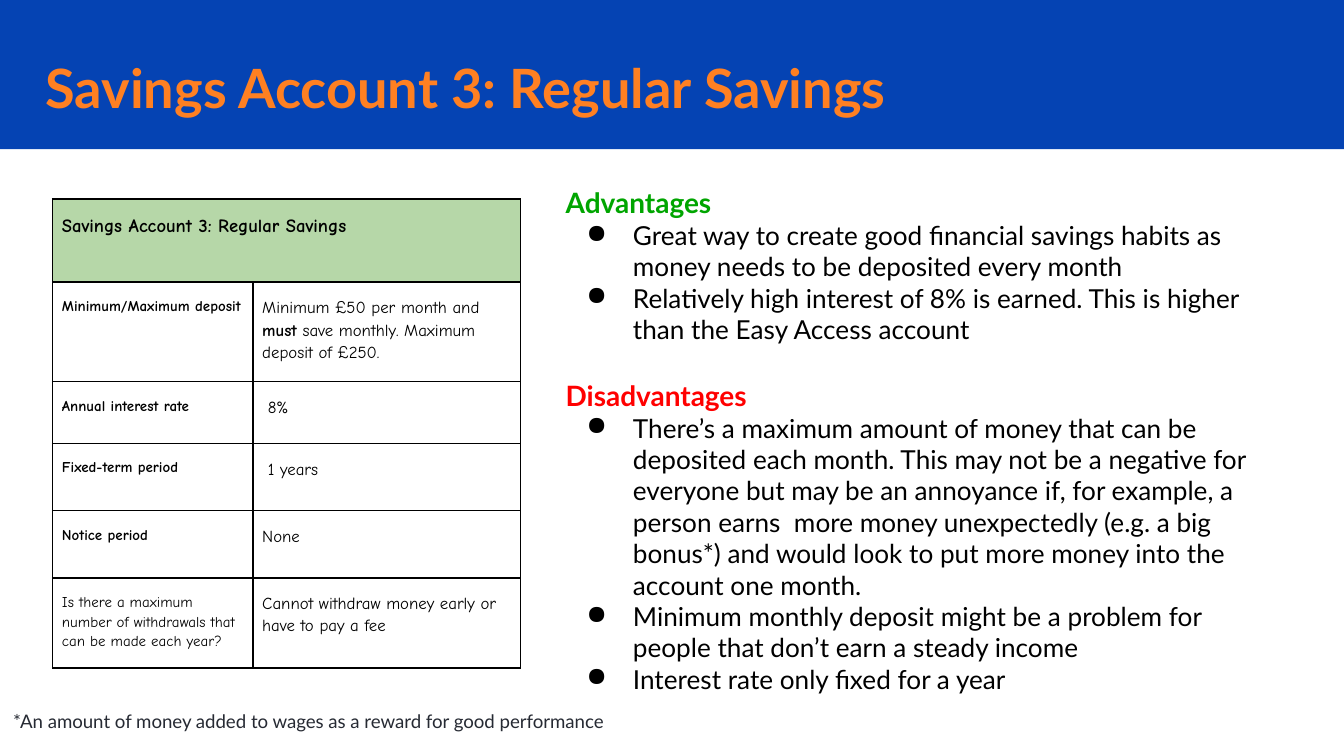
"""Build the Regular Savings slide: account table, advantages and disadvantages."""
from lxml.etree import SubElement
from pptx import Presentation
from pptx.dml.color import RGBColor
from pptx.enum.shapes import MSO_SHAPE
from pptx.oxml.ns import qn
from pptx.util import Pt

COLORS = {"band": "0543B3", "title": "FF8022", "good": "00A500", "bad": "FF0000",
          "text": "000000", "note": "262A33", "header": "B6D7A8", "white": "FFFFFF"}


def add_span(para, text, size, color="text", bold=False, name="Lato"):
    span = para.add_run()
    span.text = text
    span.font.size = Pt(size)
    span.font.name = name
    span.font.bold = bold
    span.font.color.rgb = RGBColor.from_string(COLORS[color])


def add_box(left, top, width, height):
    frame = slide.shapes.add_textbox(Pt(left), Pt(top), Pt(width), Pt(height)).text_frame
    frame.word_wrap = True
    frame.margin_left = frame.margin_right = Pt(7.2)
    frame.margin_top = frame.margin_bottom = Pt(7.2)
    return frame


deck = Presentation()
deck.slide_width, deck.slide_height = Pt(720), Pt(405)
slide = deck.slides.add_slide(deck.slide_layouts[6])

band = slide.shapes.add_shape(MSO_SHAPE.RECTANGLE, 0, 0, Pt(720), Pt(80))
band.shadow.inherit = False
band.fill.solid()
band.fill.fore_color.rgb = RGBColor.from_string(COLORS["band"])
band.line.fill.background()

sections = [
    ("Advantages", "good", [
        "Great way to create good financial savings habits as money needs to be deposited every month",
        "Relatively high interest of 8% is earned. This is higher than the Easy Access account"]),
    ("Disadvantages", "bad", [
        "There’s a maximum amount of money that can be deposited each month. This may not be a "
        "negative for everyone but may be an annoyance if, for example, a person earns  more money "
        "unexpectedly (e.g. a big bonus*) and would look to put more money into the account one month.",
        "Minimum monthly deposit might be a problem for people that don’t earn a steady income",
        "Interest rate only fixed for a year"]),
]
frame = add_box(296, 92.3, 386, 289.4)
for index, (heading, color, points) in enumerate(sections):
    para = frame.add_paragraph() if index else frame.paragraphs[0]
    if index:
        para.space_before = Pt(18)
    add_span(para, heading, 15, color, True)
    for point in points:
        para = frame.add_paragraph()
        properties = para._p.get_or_add_pPr()
        properties.set("marL", str(Pt(36)))
        properties.set("indent", str(Pt(-25)))
        bullet_color = SubElement(properties, qn("a:buClr"))
        SubElement(bullet_color, qn("a:srgbClr"), val=COLORS["text"])
        SubElement(properties, qn("a:buChar"), char="●")
        add_span(para, point, 14)

rows = [
    (44.6, [("Savings Account 3: Regular Savings", True)], []),
    (53.3, [("Minimum/Maximum deposit", True)],
     [("Minimum £50 per month and ", False), ("must", True),
      (" save monthly. Maximum deposit of £250.", False)]),
    (33.1, [("Annual interest rate", True)], [(" 8%", False)]),
    (36, [("Fixed-term period", True)], [(" 1 years", False)]),
    (36, [("Notice period", True)], [("None", False)]),
    (48.2, [("Is there a maximum number of withdrawals that can be made each year?", False)],
     [("Cannot withdraw money early or have to pay a fee", False)]),
]
widths = [107.3, 143.3]
table = slide.shapes.add_table(len(rows), 2, Pt(28.2), Pt(106.6), Pt(sum(widths)),
                               Pt(sum(row[0] for row in rows))).table
table.first_row = table.horz_banding = False
for column, width in zip(table.columns, widths):
    column.width = Pt(width)
table.cell(0, 0).merge(table.cell(0, 1))
for row_index, (height, *contents) in enumerate(rows):
    table.rows[row_index].height = Pt(height)
    for column_index, spans in enumerate(contents):
        cell = table.cell(row_index, column_index)
        cell.margin_left = cell.margin_right = Pt(5)
        cell.margin_top = cell.margin_bottom = Pt(7.2)
        para = cell.text_frame.paragraphs[0]
        para.line_spacing = 1.15
        size = 10 if row_index == 0 else (8, 9)[column_index]
        for text, bold in spans:
            add_span(para, text, size, bold=bold, name="Comic Neue")
        properties = cell._tc.get_or_add_tcPr()
        for side in ("lnL", "lnR", "lnT", "lnB"):
            border = SubElement(properties, qn(f"a:{side}"), w=str(Pt(1)))
            fill = SubElement(border, qn("a:solidFill"))
            SubElement(fill, qn("a:srgbClr"), val=COLORS["text"])
        cell.fill.solid()
        cell.fill.fore_color.rgb = RGBColor.from_string(COLORS["white" if row_index else "header"])

para = add_box(17.3, 16.6, 548, 49.7).paragraphs[0]
para.line_spacing = 1.15
add_span(para, "Savings Account 3: Regular Savings", 29, "title", True)

footnote = add_box(0, 374.4, 337, 38.9).paragraphs[0]
add_span(footnote, "*An amount of money added to wages as a reward for good performance", 10, "note")

deck.save("out.pptx")
